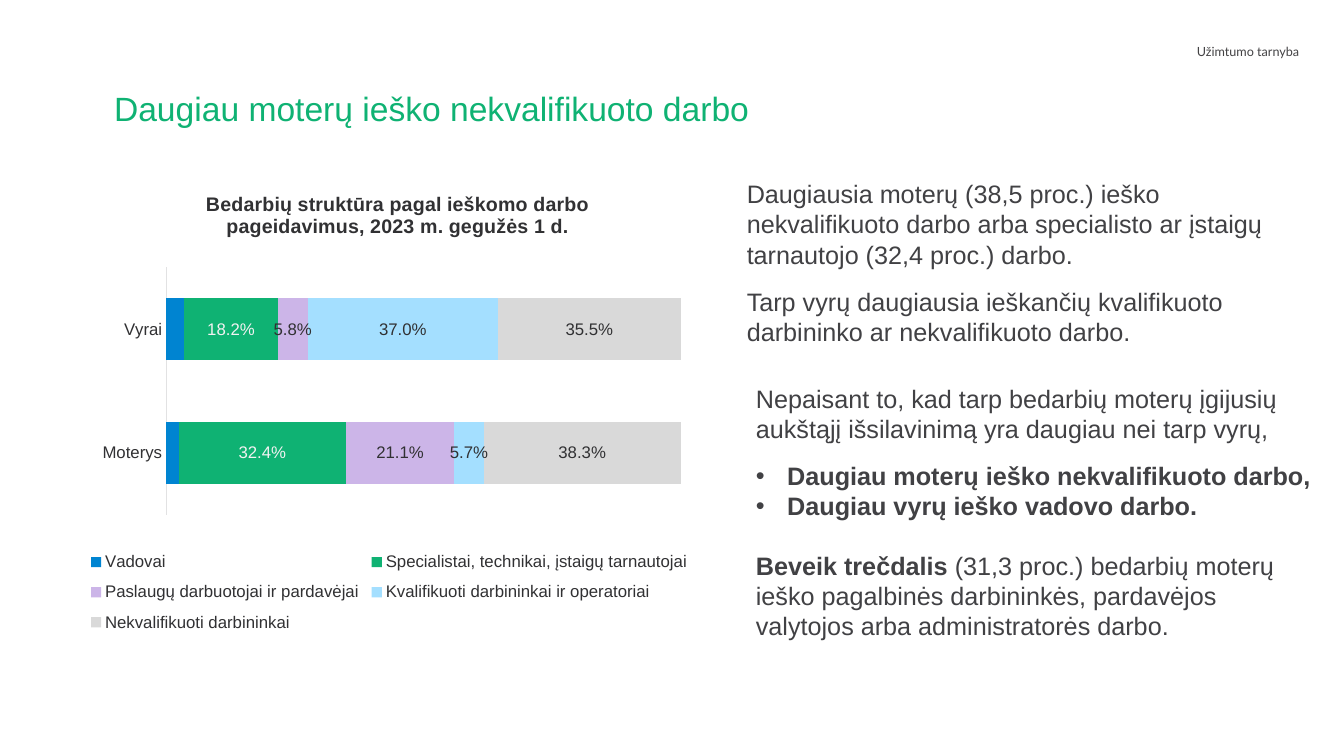
"""Builds a slide on the kinds of work that unemployed women and men look for."""
from lxml import etree
from pptx import Presentation, util as u
from pptx.chart.data import CategoryChartData
from pptx.dml.color import RGBColor
from pptx.enum import chart as c, text as t
from pptx.oxml.ns import qn

COLOURS = {"title": "0FB273", "body": "414144", "label": "434244", "chart": "313133",
           "light": "F2F2F2", "axis": "E2E2E3", "managers": "0084D1", "specialists": "0FB273",
           "services": "CCB5E8", "skilled": "A4DFFF", "unskilled": "D9D9D9"}

TITLE = "Daugiau moterų ieško nekvalifikuoto darbo"
AGENCY = "Užimtumo tarnyba"
CHART_TITLE = "Bedarbių struktūra pagal ieškomo darbo pageidavimus, 2023 m. gegužės 1 d."
CATEGORIES = ["Moterys", "Vyrai"]
SERIES = [
    ("Vadovai", (0.025, 0.035), "managers", None),
    ("Specialistai, technikai, įstaigų tarnautojai", (0.324, 0.182), "specialists", "light"),
    ("Paslaugų darbuotojai ir pardavėjai", (0.211, 0.058), "services", "chart"),
    ("Kvalifikuoti darbininkai ir operatoriai", (0.057, 0.37), "skilled", "chart"),
    ("Nekvalifikuoti darbininkai", (0.383, 0.355), "unskilled", "chart"),
]

AFTER = {"space_after": u.Pt(12)}
FINDINGS = [
    ([("Daugiausia moterų (38,5 proc.) ieško nekvalifikuoto darbo arba specialisto ar įstaigų "
       "tarnautojo (32,4 proc.) darbo.", False)], AFTER, False),
    ([("Tarp vyrų daugiausia ieškančių kvalifikuoto darbininko ar nekvalifikuoto darbo.", False)],
     AFTER, False),
]
CONTRASTS = [
    ([("Nepaisant to, kad tarp bedarbių moterų įgijusių aukštąjį išsilavinimą yra daugiau nei "
       "tarp vyrų,", False)], AFTER, False),
    ([("Daugiau moterų ieško nekvalifikuoto darbo,", True)], {}, True),
    ([("Daugiau vyrų ieško vadovo darbo.", True)], {}, True),
    ([("Beveik trečdalis ", True),
      ("(31,3 proc.) bedarbių moterų ieško pagalbinės darbininkės, pardavėjos valytojos arba "
       "administratorės darbo.", False)], {"space_before": u.Pt(21)}, False),
]
AGENCY_LINE = [([(AGENCY, False)], {"alignment": t.PP_ALIGN.RIGHT}, False)]
TEXT_BOXES = [
    ((21.56, 0.99, 11.43, 1.19), AGENCY_LINE, ("Lato", 9, "label")),
    ((18.57, 4.37, 14.5, 4.52), FINDINGS, ("Arial", 18, "body")),
    ((18.8, 9.53, 14.5, 6.83), CONTRASTS, ("Arial", 18, "body")),
]
TITLE_BOX = (2.62, 2.08, 28.63, 1.42)
CHART_BOX = (1.96, 4.62, 15.7, 11.71)


def colour(name):
    return RGBColor.from_string(COLOURS[name])


def set_values(target, values):
    for name, value in values.items():
        setattr(target, name, value)


def set_font(font, name, size, colour_name, bold=False):
    set_values(font, {"name": name, "size": u.Pt(size), "bold": bold})
    font.color.rgb = colour(colour_name)


def lengths(box):
    return [u.Cm(value) for value in box]


def add_bullet(paragraph):
    properties = paragraph._p.get_or_add_pPr()
    properties.set("marL", str(u.Cm(0.79)))
    properties.set("indent", str(-u.Cm(0.79)))
    etree.SubElement(properties, qn("a:buFont")).set("typeface", "Arial")
    etree.SubElement(properties, qn("a:buChar")).set("char", "•")


def add_text(slide, box, paragraphs, style):
    frame = slide.shapes.add_textbox(*lengths(box)).text_frame
    frame.word_wrap = True
    for index, (runs, values, bulleted) in enumerate(paragraphs):
        paragraph = frame.add_paragraph() if index else frame.paragraphs[0]
        set_values(paragraph, values)
        if bulleted:
            add_bullet(paragraph)
        for words, bold in runs:
            run = paragraph.add_run()
            run.text = words
            set_font(run.font, *style, bold=bold)


def place_part(element, position, **fractions):
    for old in element.findall(qn("c:layout")):
        element.remove(old)
    layout = etree.Element(qn("c:layout"))
    element.insert(position, layout)
    manual = etree.SubElement(layout, qn("c:manualLayout"))
    if position == 0:
        etree.SubElement(manual, qn("c:layoutTarget")).set("val", "inner")
    for axis in "xy":
        etree.SubElement(manual, qn(f"c:{axis}Mode")).set("val", "edge")
    for name, value in fractions.items():
        etree.SubElement(manual, qn(f"c:{name}")).set("val", str(value))


def add_structure_chart(slide):
    data = CategoryChartData(number_format="0.0%")
    data.categories = CATEGORIES
    for name, values, _, _ in SERIES:
        data.add_series(name, values)
    chart = slide.shapes.add_chart(c.XL_CHART_TYPE.BAR_STACKED_100, *lengths(CHART_BOX), data).chart
    set_font(chart.font, "Arial", 12, "chart")

    chart.has_title = True
    chart.chart_title.text_frame.text = CHART_TITLE
    title_run = chart.chart_title.text_frame.paragraphs[0].runs[0]
    set_font(title_run.font, "Arial", 14, "chart", True)
    chart.has_legend = True
    set_values(chart.legend, {"position": c.XL_LEGEND_POSITION.BOTTOM, "include_in_layout": False})
    set_font(chart.legend.font, "Arial", 12, "chart")

    set_values(chart.value_axis, {"visible": False, "has_major_gridlines": False,
                                  "minimum_scale": 0, "maximum_scale": 1})
    axis = chart.category_axis
    set_values(axis, {"major_tick_mark": c.XL_TICK_MARK.NONE, "minor_tick_mark": c.XL_TICK_MARK.NONE})
    set_font(axis.tick_labels.font, "Arial", 12, "chart")
    axis.format.line.color.rgb = colour("axis")
    axis.format.line.width = u.Pt(0.75)

    plot = chart.plots[0]
    set_values(plot, {"gap_width": 100, "overlap": 100, "vary_by_categories": False})
    for series, (_, _, fill, label) in zip(plot.series, SERIES):
        series.format.fill.solid()
        series.format.fill.fore_color.rgb = colour(fill)
        if label:
            set_values(series.data_labels, {"show_value": True, "number_format": "0.0%",
                                            "number_format_is_linked": False})
            set_font(series.data_labels.font, "Arial", 12, label)

    place_part(plot._element.getparent(), 0, x=0.142, y=0.181, w=0.826, h=0.533)
    place_part(chart.legend._element, 1, x=0.01, y=0.77, w=0.98, h=0.22)
    place_part(chart.chart_title._element, 1, x=0.2, y=0.01)


def main():
    presentation = Presentation()
    set_values(presentation, {"slide_width": u.Cm(33.87), "slide_height": u.Cm(19.05)})
    slide = presentation.slides.add_slide(presentation.slide_layouts[5])

    title = slide.shapes.title
    set_values(title, dict(zip(("left", "top", "width", "height"), lengths(TITLE_BOX))))
    title.text_frame.text = TITLE
    set_values(title.text_frame, {"vertical_anchor": t.MSO_ANCHOR.MIDDLE, "word_wrap": True})
    paragraph = title.text_frame.paragraphs[0]
    set_values(paragraph, {"alignment": t.PP_ALIGN.LEFT, "line_spacing": 0.9})
    set_font(paragraph.runs[0].font, "Arial", 24, "title")

    add_structure_chart(slide)
    for box, paragraphs, style in TEXT_BOXES:
        add_text(slide, box, paragraphs, style)
    presentation.save("out.pptx")


if __name__ == "__main__":
    main()
